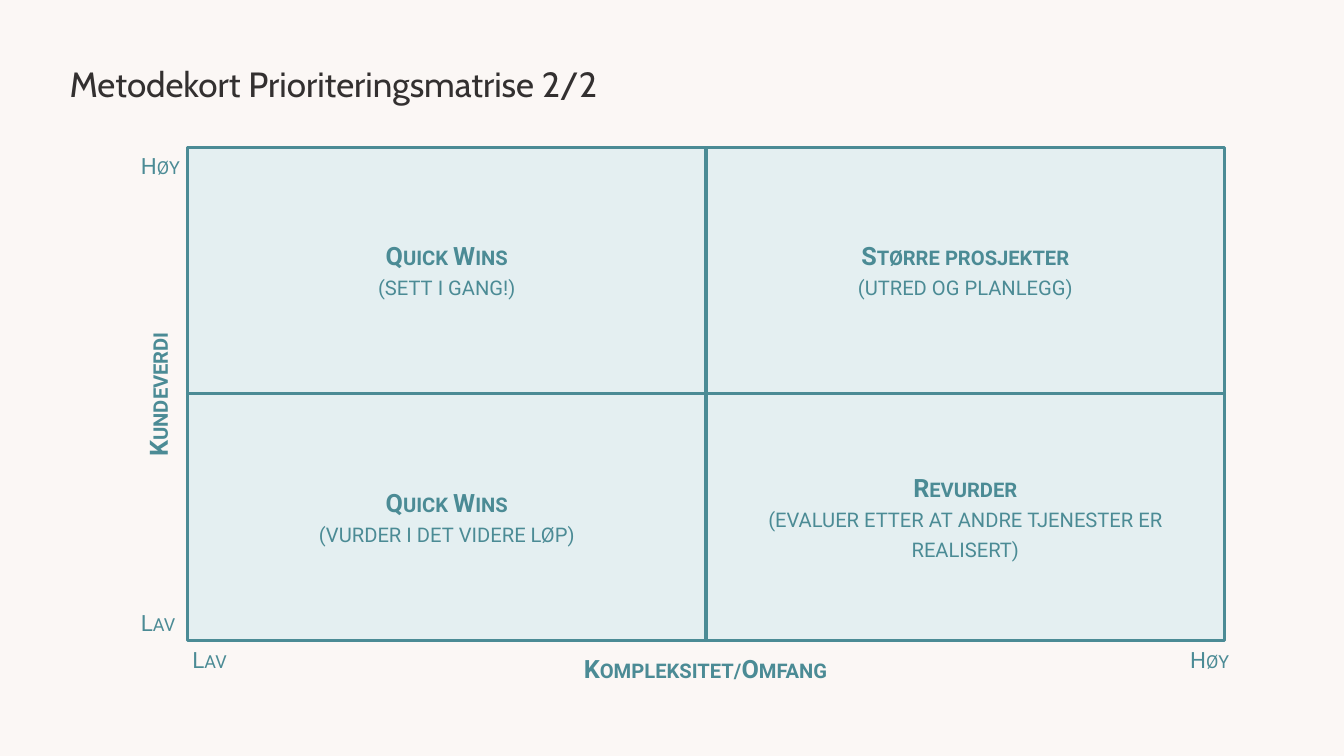
import pptx
import pptx.dml.color
import pptx.enum.shapes
import pptx.enum.text
import pptx.oxml
import pptx.oxml.ns
import pptx.util

Pt = pptx.util.Pt
ALIGN = pptx.enum.text.PP_ALIGN
ANCHOR = pptx.enum.text.MSO_ANCHOR
RECTANGLE = pptx.enum.shapes.MSO_SHAPE.RECTANGLE

COLOURS = {
    "background": "FBF7F5",
    "title": "333030",
    "teal": "4B8B95",
    "quadrant": "D9E9EC",
    "base": "FFFFFF",
}

# Matrix geometry in points
LEFT, TOP = 133.9, 105.2
CELL_WIDTH, CELL_HEIGHT = 370.4, 176.2

QUADRANTS = [
    [("Quick Wins", "(sett i gang!)"),
     ("Større prosjekter", "(utred og planlegg)")],
    [("Quick Wins", "(vurder i det videre løp)"),
     ("Revurder", "(evaluer etter at andre tjenester er realisert)")],
]

# Axis names: text, left, top, rotation
AXES = [
    ("Kompleksitet/Omfang", 352.8, 463, 0),
    ("Kundeverdi", -38.2, 267.1, 270),
]

# Ends of the axes: text, left, top
AXIS_ENDS = [
    ("Lav", 130.3, 457.9),
    ("Lav", 93.6, 431.3),
    ("Høy", 843.1, 457.9),
    ("Høy", 93.6, 105.1),
]


def colour(name):
    return pptx.dml.color.RGBColor.from_string(COLOURS[name])


def apply(target, formats):
    for attribute, value in formats.items():
        setattr(target, attribute, value)


def add_words(paragraph, text, size, bold=False, font="Roboto", ink="teal", small_caps=True):
    run = paragraph.add_run()
    run.text = text
    apply(run.font, {"name": font, "size": Pt(size), "bold": bold})
    run.font.color.rgb = colour(ink)
    if small_caps:
        run.font._element.set("cap", "small")


def add_label(slide, text, left, top, width, height, size, bold=False, align=ALIGN.LEFT, rotation=0):
    label = slide.shapes.add_textbox(Pt(left), Pt(top), Pt(width), Pt(height))
    label.rotation = rotation
    label.text_frame.word_wrap = True
    paragraph = label.text_frame.paragraphs[0]
    paragraph.alignment = align
    add_words(paragraph, text, size, bold)


def add_title(slide, text):
    title = slide.shapes.add_textbox(Pt(49.7), Pt(44.6), Pt(860.4), Pt(30.2))
    apply(title.text_frame, {
        "word_wrap": True, "vertical_anchor": ANCHOR.MIDDLE,
        "margin_left": 0, "margin_top": 0, "margin_right": 0, "margin_bottom": 0,
    })
    paragraph = title.text_frame.paragraphs[0]
    paragraph.line_spacing = Pt(30)
    add_words(paragraph, text, 25, font="Cabin", ink="title", small_caps=False)


def add_box(matrix, left, top, width, height, fill):
    box = matrix.shapes.add_shape(RECTANGLE, Pt(left), Pt(top), Pt(width), Pt(height))
    box.shadow.inherit = False
    box.fill.solid()
    box.fill.fore_color.rgb = colour(fill)
    return box


def add_quadrant(matrix, row, column, heading, advice):
    quadrant = add_box(matrix, LEFT + column * CELL_WIDTH, TOP + row * CELL_HEIGHT,
                       CELL_WIDTH, CELL_HEIGHT, "quadrant")
    # 70 % opaque fill
    tint = quadrant._element.spPr.find(".//" + pptx.oxml.ns.qn("a:srgbClr"))
    tint.append(pptx.oxml.parse_xml(
        f'<a:alpha {pptx.oxml.ns.nsdecls("a")} val="70000"/>'))
    quadrant.line.color.rgb = colour("teal")
    quadrant.line.width = Pt(2.25)
    apply(quadrant.text_frame, {"word_wrap": True, "vertical_anchor": ANCHOR.MIDDLE})
    paragraph = quadrant.text_frame.paragraphs[0]
    paragraph.alignment = ALIGN.CENTER
    add_words(paragraph, heading, 18, bold=True)
    paragraph.add_line_break()
    add_words(paragraph, advice, 18)


def add_matrix(slide):
    matrix = slide.shapes.add_group_shape()
    base = add_box(matrix, LEFT, TOP, 2 * CELL_WIDTH, 2 * CELL_HEIGHT, "base")
    base.line.fill.background()
    for row, cells in enumerate(QUADRANTS):
        for column, (heading, advice) in enumerate(cells):
            add_quadrant(matrix, row, column, heading, advice)


def main():
    deck = pptx.Presentation()
    apply(deck, {"slide_width": Pt(960), "slide_height": Pt(540)})
    slide = deck.slides.add_slide(deck.slide_layouts[6])
    slide.background.fill.solid()
    slide.background.fill.fore_color.rgb = colour("background")

    add_title(slide, "Metodekort Prioriteringsmatrise 2/2")
    add_matrix(slide)
    for text, left, top, rotation in AXES:
        add_label(slide, text, left, top, 302.4, 29.1, 18, True, ALIGN.CENTER, rotation)
    for text, left, top in AXIS_ENDS:
        add_label(slide, text, left, top, 67, 26.6, 16)

    deck.save("out.pptx")


if __name__ == "__main__":
    main()
